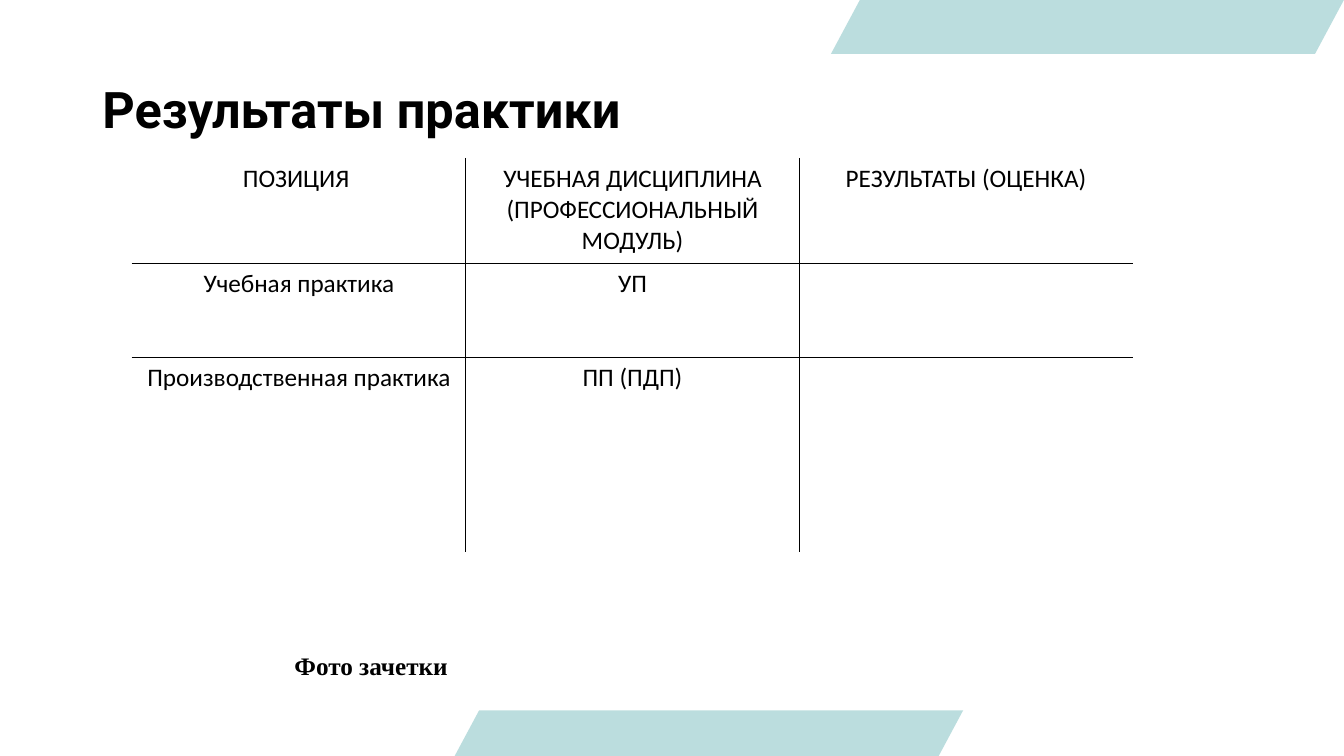
from lxml.etree import SubElement
from pptx import Presentation
from pptx.dml.color import RGBColor
from pptx.enum.shapes import MSO_SHAPE as SHAPE
from pptx.enum.text import MSO_ANCHOR as ANCHOR, MSO_AUTO_SIZE as AUTO, PP_ALIGN as ALIGN
from pptx.oxml.ns import qn
from pptx.util import Pt

COLORS = {"band": "BBDDDE", "white": "FFFFFF", "black": "000000"}
SLIDE_W, SLIDE_H = 960, 540
SLANT = 0.536
COL_WIDTH = 238.2
ROW_HEIGHTS = [75, 67.2, 139.4]
ROWS = [
    ["ПОЗИЦИЯ ", "УЧЕБНАЯ ДИСЦИПЛИНА (ПРОФЕССИОНАЛЬНЫЙ МОДУЛЬ)", "РЕЗУЛЬТАТЫ (ОЦЕНКА)"],
    ["Учебная практика", "УП", ""],
    ["Производственная практика", "ПП (ПДП)", ""],
]


def rgb(name):
    return RGBColor.from_string(COLORS[name])


def add_run(p, text, font, size, bold=False):
    r = p.add_run()
    r.text = text
    r.font.name, r.font.size, r.font.bold = font, Pt(size), bold
    r.font.color.rgb = rgb("black")


def add_backdrop(s, kind, color, left, top, width, height):
    """Plain filled shape placed behind the title."""
    sp = s.shapes.add_shape(kind, Pt(left), Pt(top), Pt(width), Pt(height))
    sp.shadow.inherit = False
    sp.fill.solid()
    sp.fill.fore_color.rgb = rgb(color)
    sp.line.fill.background()
    s.shapes.title.element.addprevious(sp.element)
    return sp


def set_title(s, text):
    sp = s.shapes.title
    sp.left, sp.top, sp.width, sp.height = Pt(66), Pt(49), Pt(829), Pt(62.6)
    tf = sp.text_frame
    tf.auto_size, tf.vertical_anchor = AUTO.NONE, ANCHOR.MIDDLE
    p = tf.paragraphs[0]
    p.alignment, p.line_spacing = ALIGN.LEFT, 0.9
    add_run(p, text, "Roboto", 36, True)


def set_border(cell, side, color):
    ln = SubElement(cell._tc.get_or_add_tcPr(), qn(f"a:ln{side}"), w=str(Pt(1)))
    fill = SubElement(ln, qn("a:solidFill"))
    SubElement(fill, qn("a:srgbClr"), val=COLORS[color])


def add_results(s, left, top):
    """Table with black inner rules and a white outer frame."""
    n_rows, n_cols = len(ROWS), len(ROWS[0])
    table = s.shapes.add_table(n_rows, n_cols, Pt(left), Pt(top),
                               Pt(COL_WIDTH * n_cols), Pt(sum(ROW_HEIGHTS))).table
    table.first_row = table.horz_banding = False
    for col in table.columns:
        col.width = Pt(COL_WIDTH)
    for i, texts in enumerate(ROWS):
        table.rows[i].height = Pt(ROW_HEIGHTS[i])
        for j, text in enumerate(texts):
            cell = table.cell(i, j)
            outer = {"L": j == 0, "R": j == n_cols - 1, "T": i == 0, "B": i == n_rows - 1}
            for side, on_edge in outer.items():
                set_border(cell, side, "white" if on_edge else "black")
            cell.fill.solid()
            cell.fill.fore_color.rgb = rgb("white")
            if text:
                p = cell.text_frame.paragraphs[0]
                p.alignment = ALIGN.CENTER
                add_run(p, text, "Calibri", 18)


def add_caption(s, text, left, top, width, height):
    tf = s.shapes.add_textbox(Pt(left), Pt(top), Pt(width), Pt(height)).text_frame
    tf.word_wrap, tf.auto_size = True, AUTO.SHAPE_TO_FIT_TEXT
    add_run(tf.paragraphs[0], text, "Times New Roman", 18, True)


def main():
    prs = Presentation()
    prs.slide_width, prs.slide_height = Pt(SLIDE_W), Pt(SLIDE_H)
    s = prs.slides.add_slide(prs.slide_layouts[5])
    band = add_backdrop(s, SHAPE.PARALLELOGRAM, "band", 324.8, 0, SLIDE_W - 324.8, SLIDE_H)
    band.adjustments[0] = SLANT
    add_backdrop(s, SHAPE.RECTANGLE, "white", 0, 38.6, SLIDE_W, 468.8)
    set_title(s, "Результаты практики")
    add_results(s, 94.5, 113.2)
    add_caption(s, "Фото зачетки", 203.2, 460.6, 322, 29)
    prs.save("out.pptx")


if __name__ == "__main__":
    main()
